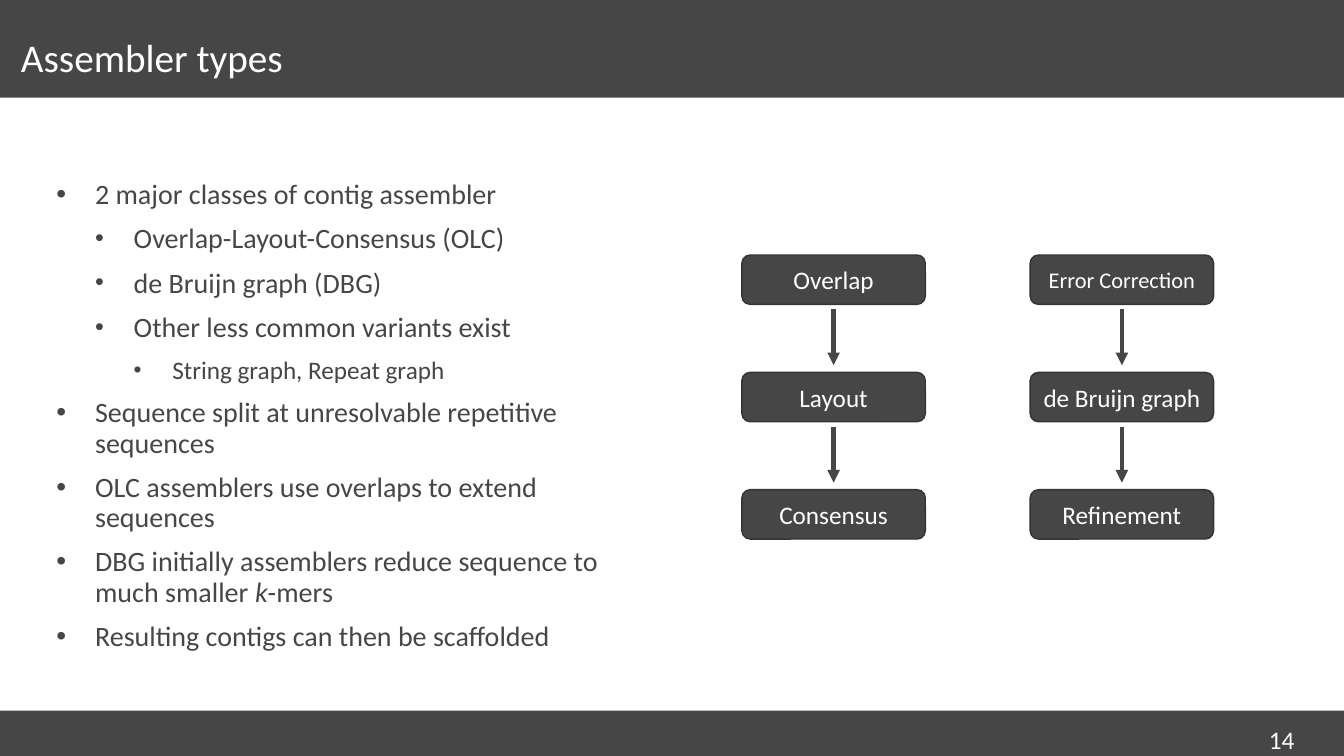
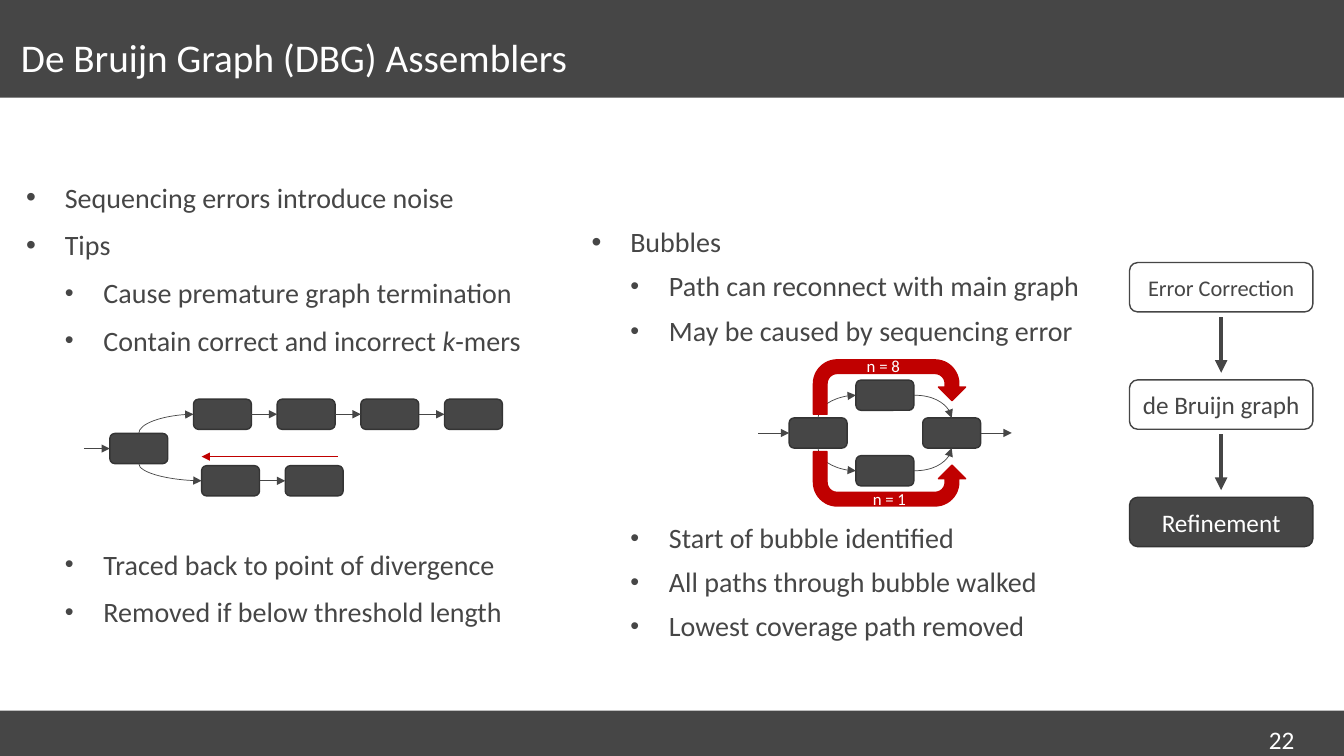
"""Build two slides about contig assemblers on a grid of 160 columns by 90 rows."""
from dataclasses import dataclass
from itertools import pairwise
from typing import Optional

from lxml.etree import SubElement
from pptx import Presentation
from pptx.dml.color import RGBColor
from pptx.enum.shapes import MSO_CONNECTOR as Link, MSO_SHAPE as Preset
from pptx.enum.text import MSO_ANCHOR as Anchor, PP_ALIGN as Align
from pptx.oxml.ns import qn
from pptx.util import Emu, Inches, Pt

COLUMNS, ROWS = 160, 90
CELL = Inches(13.33) / COLUMNS
FONT = "Calibri"
DARK, EDGE, WHITE, RED = "464646", "343434", "FFFFFF", "C00000"
INDENT = 4.6
BOX_WIDTH, BOX_HEIGHT, BOX_STEP = 21.84, 5.88, 13.97
NODE_WIDTH, NODE_HEIGHT, NODE_STEP = 6.9, 3.6, 9.96


@dataclass(frozen=True)
class Area:
    left: float
    top: float
    width: float
    height: float


@dataclass(frozen=True)
class Bullet:
    text: str
    level: int = 0
    size: int = 20


@dataclass(frozen=True)
class BulletList:
    area: Area
    bullets: tuple[Bullet, ...]
    spacing: float = 0.9


@dataclass(frozen=True)
class Step:
    text: str
    size: int = 18
    filled: bool = True


@dataclass(frozen=True)
class Flow:
    left: float
    top: float
    steps: tuple[Step, ...]


def cells(count: float) -> Emu:
    return Emu(round(count * CELL))


def place(area: Area) -> tuple[Emu, ...]:
    return tuple(map(cells, (area.left, area.top, area.width, area.height)))


def colour(value: str) -> RGBColor:
    return RGBColor.from_string(value)


def style(font, size: float, tint: str) -> None:
    font.name, font.size = FONT, Pt(size)
    font.color.rgb = colour(tint)


def add_block(page, area: Area, preset=Preset.ROUNDED_RECTANGLE,
              fill: str = DARK, line: Optional[str] = EDGE):
    block = page.shapes.add_shape(preset, *place(area))
    block.shadow.inherit = False
    block.fill.solid()
    block.fill.fore_color.rgb = colour(fill)
    if line:
        block.line.color.rgb = colour(line)
        block.line.width = Pt(1)
    else:
        block.line.fill.background()
    return block


def add_text(page, area: Area, text: str, size: float, wrap: bool = True):
    box = page.shapes.add_textbox(*place(area))
    box.text_frame.word_wrap = wrap
    box.text_frame.text = text
    style(box.text_frame.paragraphs[0].runs[0].font, size, WHITE)
    return box.text_frame


def add_link(page, start=(0, 0), end=(0, 0), kind=Link.STRAIGHT,
             tint: str = DARK, width: float = 0.5, arrow: str = "tailEnd"):
    points = map(cells, (*start, *end))
    link = page.shapes.add_connector(kind, *points)
    link.line.color.rgb = colour(tint)
    link.line.width = Pt(width)
    SubElement(link.line._get_or_add_ln(), qn(f"a:{arrow}"), type="triangle")
    SubElement(link._element.spPr, qn("a:effectLst"))
    return link


def join(page, source, target) -> None:
    link = add_link(page)
    link.begin_connect(source, 3)
    link.end_connect(target, 1)


def add_curve(page, side_node, side: int, edge_node, edge: int, arrow: str) -> None:
    link = add_link(page, kind=Link.CURVE, arrow=arrow)
    link.begin_connect(side_node, side)
    link.end_connect(edge_node, edge)
    link._element.spPr.find(qn("a:prstGeom")).set("prst", "curvedConnector2")


def add_bullets(page, content: BulletList) -> None:
    frame = page.shapes.add_textbox(*place(content.area)).text_frame
    frame.word_wrap = True
    frame.margin_left = frame.margin_right = 0
    for index, bullet in enumerate(content.bullets):
        para = frame.add_paragraph() if index else frame.paragraphs[0]
        para.level = bullet.level
        props = para._p.get_or_add_pPr()
        props.set("marL", str(cells(INDENT * (bullet.level + 1))))
        props.set("indent", str(-cells(INDENT)))
        tint = SubElement(props, qn("a:buClr"))
        SubElement(tint, qn("a:srgbClr"), val=DARK)
        SubElement(props, qn("a:buSzPct"), val="90000" if bullet.level else "100000")
        SubElement(props, qn("a:buFont"), typeface="Arial")
        SubElement(props, qn("a:buChar"), char="•")
        para.line_spacing = content.spacing
        para.space_before = Pt(6 if index else 0)
        para.space_after = Pt(4)
        for part, words in enumerate(bullet.text.split("*")):
            span = para.add_run()
            span.text = words
            style(span.font, bullet.size, DARK)
            span.font.italic = part % 2 == 1


def add_flow(page, flow: Flow) -> None:
    middle = flow.left + BOX_WIDTH / 2
    for index, step in enumerate(flow.steps):
        top = flow.top + index * BOX_STEP
        fill, line, ink = (DARK, EDGE, WHITE) if step.filled else (WHITE, DARK, DARK)
        area = Area(flow.left, top, BOX_WIDTH, BOX_HEIGHT)
        frame = add_block(page, area, fill=fill, line=line).text_frame
        frame.word_wrap = True
        frame.vertical_anchor = Anchor.MIDDLE
        frame.text = step.text
        para = frame.paragraphs[0]
        para.alignment = Align.CENTER
        style(para.runs[0].font, step.size, ink)
        if index:
            add_link(page, (middle, top - BOX_STEP + BOX_HEIGHT + 0.6),
                     (middle, top - 0.85), width=3)


def add_node(page, left: float, top: float):
    return add_block(page, Area(left, top, NODE_WIDTH, NODE_HEIGHT))


def add_entry(page, node, left: float, top: float, length: float) -> None:
    row = top + NODE_HEIGHT / 2
    add_link(page, (left - length, row), (left, row)).end_connect(node, 1)


def add_tips(page) -> None:
    left, top = 13.08, 51.6
    fork = add_node(page, left, top)
    add_entry(page, fork, left, top, 3.1)
    for start, row, count, edge in ((23.04, 47.52, 4, 0), (24, 55.44, 2, 2)):
        chain = [add_node(page, start + i * NODE_STEP, row) for i in range(count)]
        add_curve(page, chain[0], 1, fork, edge, "headEnd")
        for source, target in pairwise(chain):
            join(page, source, target)
    add_link(page, (40.2, 54.36), (24, 54.36), tint=RED)


def add_bubble(page) -> None:
    centre, row, reach, rise, length = 101.9, 49.75, 7.95, 4.5, 3.7
    upper, lower = (add_node(page, centre, row + shift) for shift in (-rise, rise))
    first, last = (add_node(page, centre + shift, row) for shift in (-reach, reach))
    for node, edge in ((upper, 0), (lower, 2)):
        add_curve(page, node, 1, first, edge, "headEnd")
        add_curve(page, node, 3, last, edge, "tailEnd")
    add_entry(page, first, centre - reach, row, length)
    right, middle = centre + reach + NODE_WIDTH, row + NODE_HEIGHT / 2
    add_link(page, (right, middle), (right + length, middle)).begin_connect(last, 3)
    for top, flipped in ((42.84, False), (53.76, True)):
        turn = add_block(page, Area(96.84, top, 18.12, 6.48), Preset.U_TURN_ARROW, RED, RED)
        if flipped:
            turn._element.spPr.find(qn("a:xfrm")).set("flipV", "1")
    for left, top, label in ((102, 41.76, "n = 8"), (102.72, 57.6, "n = 1")):
        add_text(page, Area(left, top, 6.48, 3.6), label, 12, wrap=False)


def add_page(deck, title: str, number: int, lists: tuple[BulletList, ...],
             flows: tuple[Flow, ...]):
    page = deck.slides.add_slide(deck.slide_layouts[6])
    for top, height in ((0, 11.64), (84.6, ROWS - 84.6)):
        add_block(page, Area(0, top, COLUMNS, height), Preset.RECTANGLE, line=None)
    heading = add_text(page, Area(2.5, 2.76, 138.24, 9), title, 28)
    heading.margin_left = heading.margin_right = 0
    heading.vertical_anchor = Anchor.MIDDLE
    heading.paragraphs[0].line_spacing = 0.8
    add_text(page, Area(149.88, 85.68, 8.4, 3), str(number), 18)
    for content in lists:
        add_bullets(page, content)
    for flow in flows:
        add_flow(page, flow)
    return page


TYPES = BulletList(Area(6.72, 20.88, 69.84, 60.48), (
    Bullet("2 major classes of contig assembler"),
    Bullet("Overlap-Layout-Consensus (OLC)", 1),
    Bullet("de Bruijn graph (DBG)", 1),
    Bullet("Other less common variants exist", 1),
    Bullet("String graph, Repeat graph", 2, 18),
    Bullet("Sequence split at unresolvable repetitive sequences"),
    Bullet("OLC assemblers use overlaps to extend sequences"),
    Bullet("DBG initially assemblers reduce sequence to much smaller *k*-mers"),
    Bullet("Resulting contigs can then be scaffolded"),
))
NOISE = (
    BulletList(Area(3.12, 20.88, 69.84, 24), (
        Bullet("Sequencing errors introduce noise"),
        Bullet("Tips"),
        Bullet("Cause premature graph termination", 1),
        Bullet("Contain correct and incorrect *k*-mers", 1),
    ), 1.0),
    BulletList(Area(3.12, 64.56, 69.84, 12), (
        Bullet("Traced back to point of divergence", 1),
        Bullet("Removed if below threshold length", 1),
    ), 1.0),
    BulletList(Area(70.44, 26.6, 63, 16), (
        Bullet("Bubbles"),
        Bullet("Path can reconnect with main graph", 1),
        Bullet("May be caused by sequencing error", 1),
    )),
    BulletList(Area(70.44, 61.8, 63, 16), (
        Bullet("Start of bubble identified", 1),
        Bullet("All paths through bubble walked", 1),
        Bullet("Lowest coverage path removed", 1),
    )),
)
OLC_FLOW = Flow(88.32, 30.36, (Step("Overlap"), Step("Layout"), Step("Consensus")))
DBG_FLOW = Flow(122.64, 30.36, (
    Step("Error Correction", 16), Step("de Bruijn graph"), Step("Refinement")))
REFINE_FLOW = Flow(134.46, 31.26, (
    Step("Error Correction", 16, False), Step("de Bruijn graph", 18, False),
    Step("Refinement")))


def main() -> None:
    deck = Presentation()
    deck.slide_width, deck.slide_height = cells(COLUMNS), cells(ROWS)
    add_page(deck, "Assembler types", 14, (TYPES,), (OLC_FLOW, DBG_FLOW))
    page = add_page(deck, "De Bruijn Graph (DBG) Assemblers", 22, NOISE, (REFINE_FLOW,))
    add_bubble(page)
    add_tips(page)
    deck.save("out.pptx")


if __name__ == "__main__":
    main()
